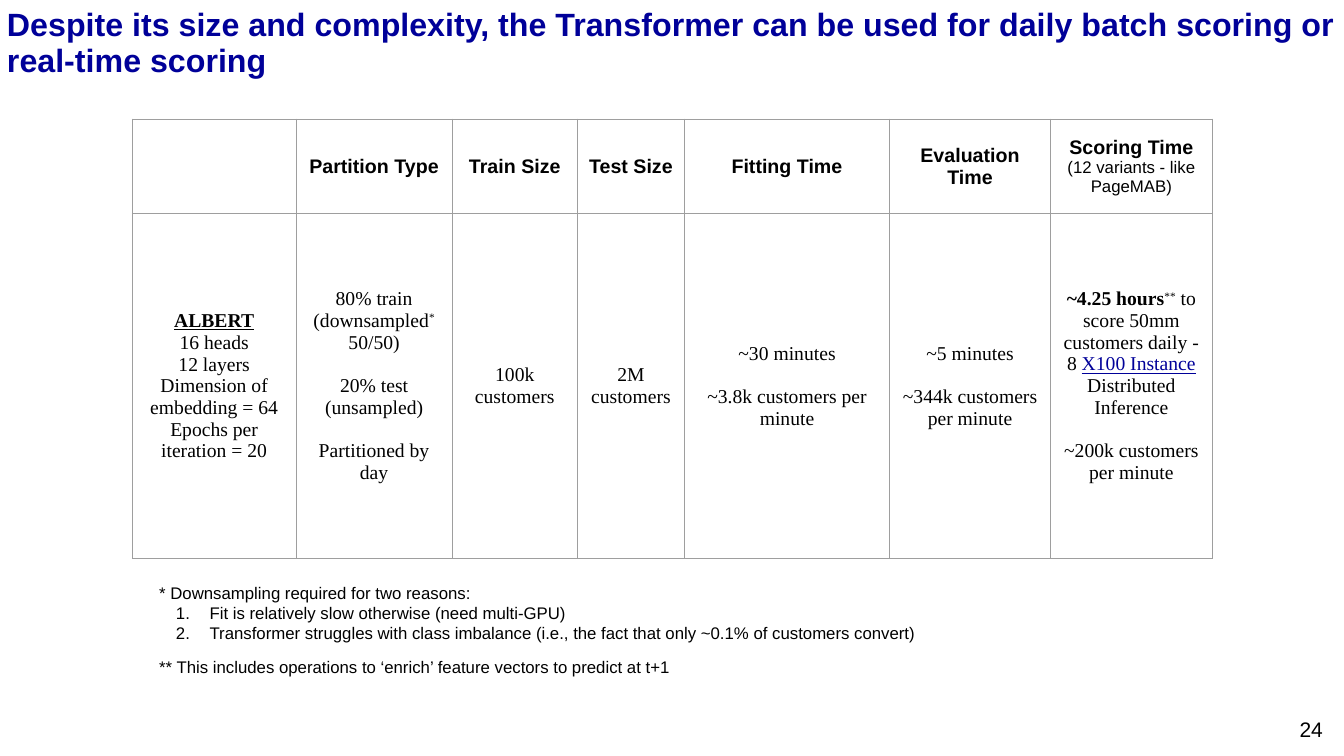
from dataclasses import dataclass

from lxml.etree import SubElement
from pptx import Presentation
from pptx.dml.color import RGBColor
from pptx.enum.text import MSO_ANCHOR, MSO_AUTO_SIZE, PP_ALIGN
from pptx.oxml.ns import qn
from pptx.util import Pt


@dataclass(frozen=True)
class Theme:
    ink: RGBColor = RGBColor(0x00, 0x00, 0x00)
    blue: RGBColor = RGBColor(0x00, 0x00, 0x99)
    rule: str = "9E9E9E"
    sans: str = "Arial"
    serif: str = "Times New Roman"
    head: Pt = Pt(23)
    page: Pt = Pt(15)
    cell: Pt = Pt(14)
    note: Pt = Pt(12)


THEME = Theme()
LEFT, MID, RIGHT = PP_ALIGN.LEFT, PP_ALIGN.CENTER, PP_ALIGN.RIGHT
SMALL = {"size": THEME.note, "bold": False}
BOLD = {"bold": True}
LINK = {"color": THEME.blue, "underline": True}
RAISED = {"raised": True}
GAP = {"space_before": Pt(15.5)}  # one line of table text
LISTED = {"listed": True}

# Each cell is a list of paragraphs: a string, or (runs, paragraph format)
HEADS = [
    [],
    ["Partition Type"],
    ["Train Size"],
    ["Test Size"],
    ["Fitting Time"],
    ["Evaluation Time"],
    ["Scoring Time", ([("(12 variants - like PageMAB)", SMALL)], {})],
]
FACTS = [
    [([("ALBERT", {"bold": True, "underline": True})], {}),
     "16 heads", "12 layers", "Dimension of embedding = 64",
     "Epochs per iteration = 20"],
    [([("80% train (downsampled", {}), ("*", RAISED), (" 50/50)", {})], {}),
     ([("20% test", {})], GAP),
     "(unsampled)",
     ([("Partitioned by day", {})], GAP)],
    ["100k", "customers"],
    ["2M", "customers"],
    ["~30 minutes", ([("~3.8k customers per minute", {})], GAP)],
    ["~5 minutes", ([("~344k customers per minute", {})], GAP)],
    [([("~4.25 hours", BOLD), ("**", RAISED),
       (" to score 50mm customers daily - 8 ", {}),
       ("X100 Instance", LINK), (" Distributed Inference", {})], {}),
     ([("~200k customers", {})], GAP),
     "per minute"],
]
NOTES = [
    "* Downsampling required for two reasons:",
    ([("Fit is relatively slow otherwise (need multi-GPU)", {})], LISTED),
    ([("Transformer struggles with class imbalance (i.e., the fact that "
       "only ~0.1% of customers convert)", {})], LISTED),
    ([("** This includes operations to ‘enrich’ feature vectors to predict "
       "at t+1", {})], {"space_before": Pt(10)}),
]
COLS = [117, 111.5, 89.5, 76.5, 146.5, 115, 115.5]
ROWS = [67.5, 246.5]


def apply(thing, form):
    for key, value in form.items():
        setattr(thing, key, value)


def place(shape, box):
    names = ("left", "top", "width", "height")
    apply(shape, {name: Pt(n) for name, n in zip(names, box)})


def inset(thing, x, y):
    apply(thing, {"margin_left": Pt(x), "margin_right": Pt(x),
                  "margin_top": Pt(y), "margin_bottom": Pt(y)})


def bullet(para, listed):
    props = para._p.get_or_add_pPr()
    props.set("marL", str(Pt(36 if listed else 0)))
    props.set("indent", str(Pt(-24 if listed else 0)))
    if listed:
        SubElement(props, qn("a:buFont"), typeface=THEME.sans)
        SubElement(props, qn("a:buAutoNum"), type="arabicPeriod")
    else:
        SubElement(props, qn("a:buNone"))


def write(frame, paras, font, align=LEFT, **extra):
    for i, item in enumerate(paras):
        runs, form = ([(item, {})], {}) if isinstance(item, str) else item
        form = {"alignment": align, "space_before": Pt(0), **extra, **form}
        para = frame.paragraphs[0] if i == 0 else frame.add_paragraph()
        bullet(para, form.pop("listed", False))
        apply(para, form)
        for text, style in runs:
            run = para.add_run()
            run.text = text
            look = {"color": THEME.ink, "bold": False, **font, **style}
            run.font.color.rgb = look.pop("color")
            if look.pop("raised", False):
                run._r.get_or_add_rPr().set("baseline", "30000")
            apply(run.font, look)


def border(cell):
    props = cell._tc.get_or_add_tcPr()
    for side in ("lnL", "lnR", "lnT", "lnB"):
        line = SubElement(props, qn("a:" + side), w=str(Pt(0.75)))
        fill = SubElement(line, qn("a:solidFill"))
        SubElement(fill, qn("a:srgbClr"), val=THEME.rule)


def add_title(slide, box):
    shape = slide.shapes.title
    place(shape, box)
    frame = shape.text_frame
    apply(frame, {"word_wrap": True, "auto_size": MSO_AUTO_SIZE.NONE,
                  "vertical_anchor": MSO_ANCHOR.TOP})
    inset(frame, 5, 5)
    write(frame, ["Despite its size and complexity, the Transformer can be "
                  "used for daily batch scoring or real-time scoring"],
          {"name": THEME.sans, "size": THEME.head, "bold": True,
           "color": THEME.blue}, line_spacing=0.95)


def add_grid(slide, left, top):
    box = [Pt(n) for n in (left, top, sum(COLS), sum(ROWS))]
    table = slide.shapes.add_table(len(ROWS), len(COLS), *box).table
    apply(table, {"first_row": False, "horz_banding": False})
    for col, width in zip(table.columns, COLS):
        col.width = Pt(width)
    fonts = [{"name": THEME.sans, "size": THEME.cell, "bold": True},
             {"name": THEME.serif, "size": THEME.cell}]
    for r, (texts, font) in enumerate(zip((HEADS, FACTS), fonts)):
        table.rows[r].height = Pt(ROWS[r])
        for c, paras in enumerate(texts):
            cell = table.cell(r, c)
            border(cell)
            cell.fill.background()
            cell.vertical_anchor = MSO_ANCHOR.MIDDLE
            inset(cell, 7.2, 7.2)
            write(cell.text_frame, paras, font, MID)


def add_notes(slide, box):
    shape = slide.placeholders[1]
    place(shape, box)
    frame = shape.text_frame
    apply(frame, {"word_wrap": True, "auto_size": MSO_AUTO_SIZE.NONE,
                  "vertical_anchor": MSO_ANCHOR.TOP})
    inset(frame, 7.2, 7.2)
    write(frame, NOTES, {"name": THEME.sans, "size": THEME.note})


def add_page(slide, box):
    frame = slide.shapes.add_textbox(*[Pt(n) for n in box]).text_frame
    apply(frame, {"word_wrap": True, "vertical_anchor": MSO_ANCHOR.MIDDLE})
    inset(frame, 7.2, 3.6)
    write(frame, ["24"], {"name": THEME.sans, "size": THEME.page}, RIGHT)


def main():
    deck = Presentation()
    apply(deck, {"slide_width": Pt(960), "slide_height": Pt(540)})
    slide = deck.slides.add_slide(deck.slide_layouts[1])
    add_title(slide, (0, 0, 960, 53.5))
    add_grid(slide, 94.5, 85)
    add_notes(slide, (106.5, 409, 646.5, 83))
    add_page(slide, (782.5, 508.5, 169.5, 24.5))
    deck.save("out.pptx")


if __name__ == "__main__":
    main()
